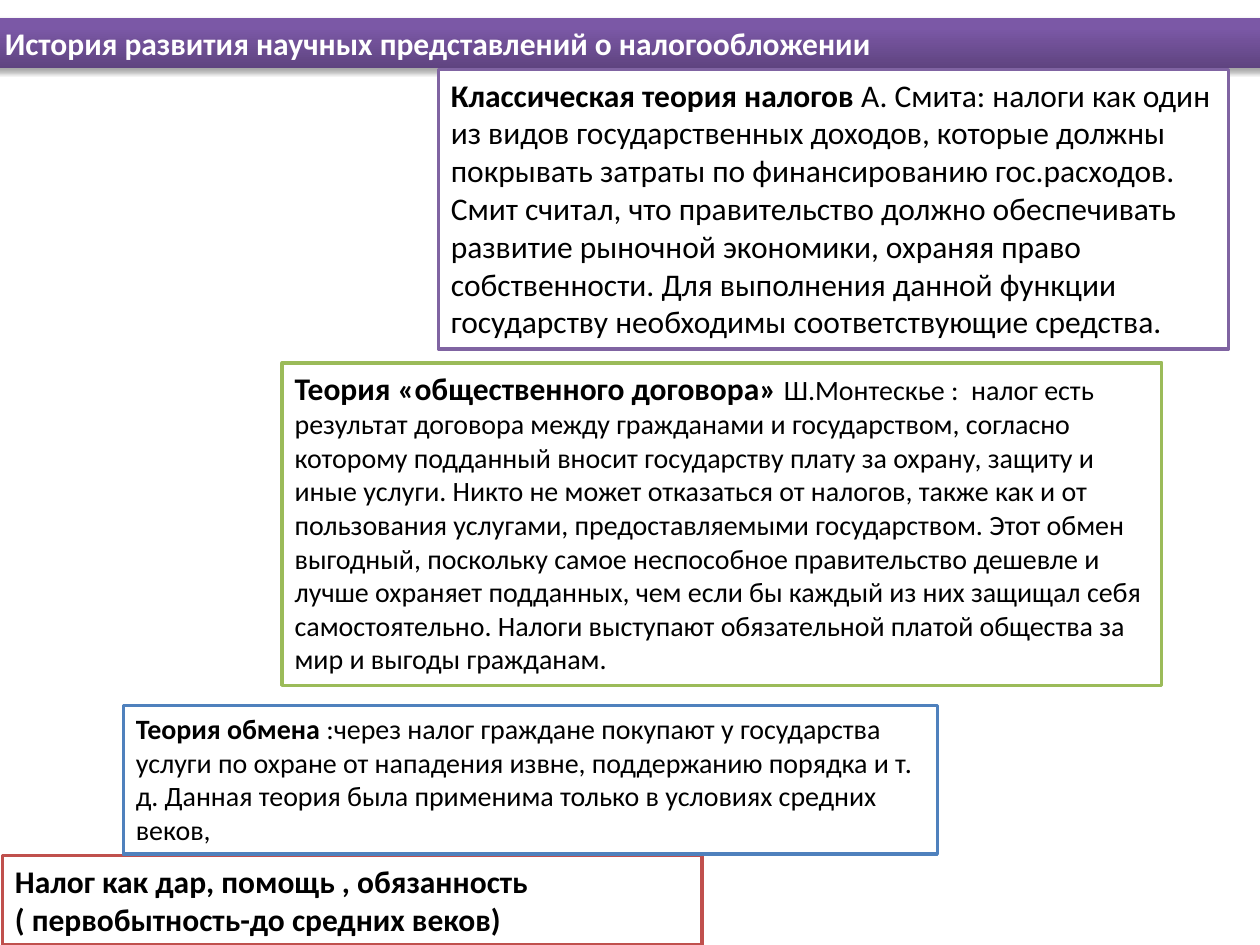
import copy
from dataclasses import dataclass

import pptx
import pptx.dml.color
import pptx.enum.shapes
import pptx.enum.text
import pptx.oxml
import pptx.oxml.ns
import pptx.util
from pptx.util import Inches


@dataclass(frozen=True)
class Theme:
    font: str = "Calibri"
    large: int = 18
    normal: int = 16
    border: int = 2
    ink: str = "000000"
    paper: str = "FFFFFF"
    purple: str = "8064A2"
    green: str = "9BBB59"
    blue: str = "4F81BD"
    red: str = "C0504D"
    banner_stops: tuple = ((0, "5F4480"), (0.8, "7B58A6"), (1, "7C57A8"))


THEME = Theme()

# Each theory: left, top, width, height, border colour, paragraphs of (text, size, bold) runs
THEORIES = (
    (0.02, 6.79, 5.55, 0.71, THEME.red, (
        (("Налог как дар, помощь , обязанность", THEME.large, True),),
        (("( первобытность-до средних веков)", THEME.large, True),),
    )),
    (0.98, 5.6, 6.46, 1.18, THEME.blue, ((
        ("Теория обмена", THEME.normal, True),
        (" :через налог граждане покупают у государства услуги по охране "
         "от нападения извне, поддержанию порядка и т. д. Данная теория была "
         "применима только в условиях средних веков,", THEME.normal, False),
    ),)),
    (2.24, 2.88, 6.98, 2.56, THEME.green, ((
        ("Теория «общественного договора» ", THEME.large, True),
        ("Ш.Монтескье :  налог есть результат договора между гражданами "
         "и государством, согласно которому подданный вносит государству плату "
         "за охрану, защиту и иные услуги. Никто не может отказаться "
         "от налогов, также как и от пользования услугами, предоставляемыми "
         "государством. Этот обмен выгодный, поскольку самое неспособное "
         "правительство дешевле и лучше охраняет подданных, чем если бы каждый "
         "из них защищал себя самостоятельно. Налоги выступают обязательной "
         "платой общества за мир и выгоды гражданам.", THEME.normal, False),
    ),)),
    (3.48, 0.55, 6.27, 2.22, THEME.purple, ((
        ("Классическая теория налогов ", THEME.large, True),
        ("А. Смита: налоги как один из видов государственных доходов, которые "
         "должны покрывать затраты по финансированию гос.расходов. Смит считал, "
         "что правительство должно обеспечивать развитие рыночной экономики, "
         "охраняя право собственности. Для выполнения данной функции государству "
         "необходимы соответствующие средства.", THEME.large, False),
    ),)),
)


def rgb(value):
    return pptx.dml.color.RGBColor.from_string(value)


def add_panel(slide, left, top, width, height, paragraphs, color):
    """Add a rectangle with left-aligned text that starts at its top."""
    panel = slide.shapes.add_shape(
        pptx.enum.shapes.MSO_SHAPE.RECTANGLE,
        Inches(left), Inches(top), Inches(width), Inches(height))
    panel.shadow.inherit = False
    frame = panel.text_frame
    frame.word_wrap = True
    frame.auto_size = pptx.enum.text.MSO_AUTO_SIZE.SHAPE_TO_FIT_TEXT
    frame.vertical_anchor = pptx.enum.text.MSO_ANCHOR.TOP
    for index, runs in enumerate(paragraphs):
        paragraph = frame.add_paragraph() if index else frame.paragraphs[0]
        paragraph.alignment = pptx.enum.text.PP_ALIGN.LEFT
        for text, size, bold in runs:
            run = paragraph.add_run()
            run.text = text
            run.font.name = THEME.font
            run.font.size = pptx.util.Pt(size)
            run.font.bold = bold
            run.font.color.rgb = rgb(color)
    return panel


def add_theory(slide, left, top, width, height, border, paragraphs):
    theory = add_panel(slide, left, top, width, height, paragraphs, THEME.ink)
    theory.fill.solid()
    theory.fill.fore_color.rgb = rgb(THEME.paper)
    theory.line.color.rgb = rgb(border)
    theory.line.width = pptx.util.Pt(THEME.border)


def fill_with_gradient(panel, stops):
    """Run the gradient stops from the bottom of the panel to its top."""
    panel.fill.gradient()
    panel.fill.gradient_angle = 90
    stop_list = panel.fill._fill._gradFill.find(pptx.oxml.ns.qn("a:gsLst"))
    while len(stop_list) < len(stops):
        stop_list.append(copy.deepcopy(stop_list[0]))
    for stop, (position, color) in zip(panel.fill.gradient_stops, stops):
        stop.position = position
        stop.color.rgb = rgb(color)


def drop_shadow(panel):
    effects = panel._element.spPr.find(pptx.oxml.ns.qn("a:effectLst"))
    effects.append(pptx.oxml.parse_xml(
        f'<a:outerShdw {pptx.oxml.ns.nsdecls("a")} blurRad="40000" dist="23000" '
        'dir="5400000" rotWithShape="0"><a:srgbClr val="000000">'
        '<a:alpha val="35000"/></a:srgbClr></a:outerShdw>'))


def add_banner(slide, title):
    banner = add_panel(slide, -0.06, 0.14, 10.17, 0.4,
                       (((title, THEME.large, True),),), THEME.paper)
    fill_with_gradient(banner, THEME.banner_stops)
    banner.line.fill.background()
    drop_shadow(banner)


def main():
    deck = pptx.Presentation()
    deck.slide_width, deck.slide_height = Inches(10), Inches(7.5)
    slide = deck.slides.add_slide(deck.slide_layouts[6])
    add_banner(slide, "История развития научных представлений о налогообложении")
    for theory in THEORIES:
        add_theory(slide, *theory)
    deck.save("out.pptx")


if __name__ == "__main__":
    main()
